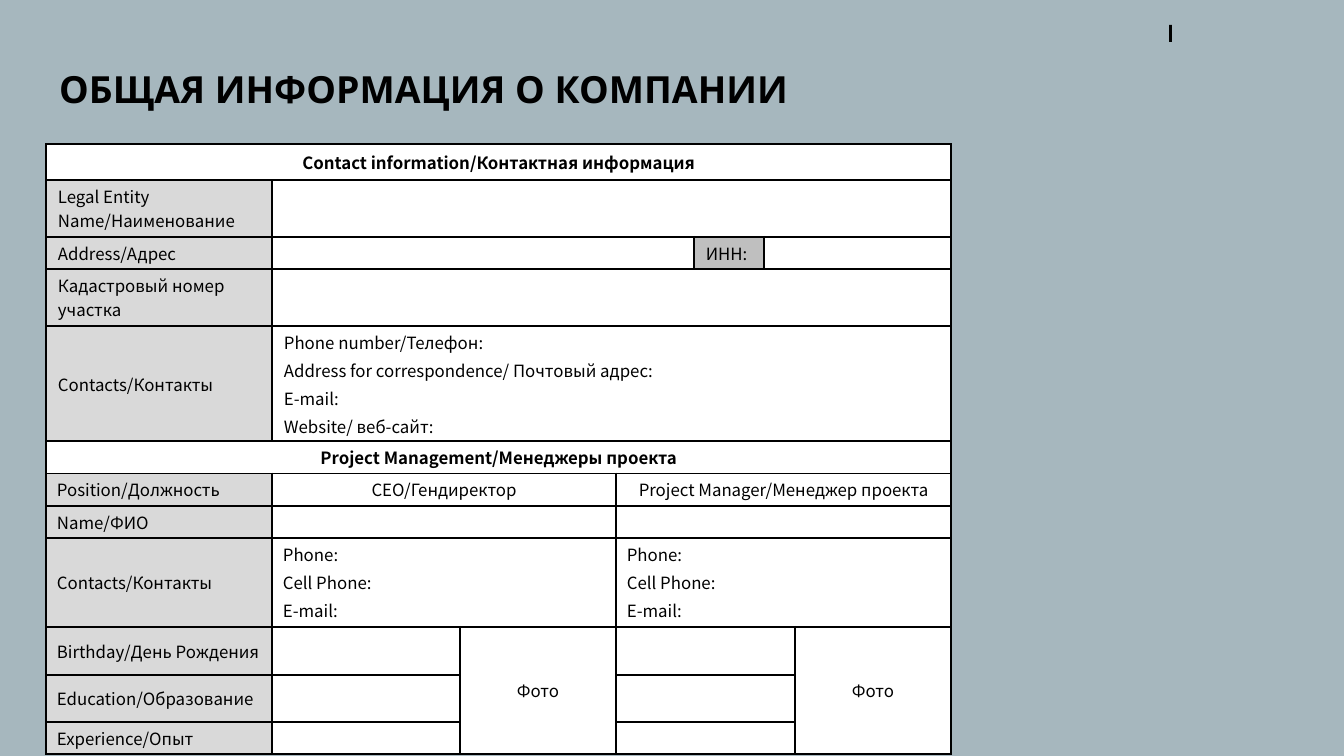
from dataclasses import dataclass

from lxml import etree
from pptx import Presentation
from pptx import util as u
from pptx.dml.color import RGBColor
from pptx.enum import shapes, text
from pptx.oxml.ns import qn


@dataclass(frozen=True)
class Theme:
    background: str = "A6B7BE"
    ink: str = "000000"
    white: str = "FFFFFF"
    label: str = "D9D9D9"
    accent: str = "BFBFBF"
    title_font: str = "Noto Sans"
    body_font: str = "Noto Sans CJK SC"
    title_pt: int = 20
    body_pt: int = 9
    gap_pt: int = 2
    border_pt: int = 1


@dataclass(frozen=True)
class Cell:
    row: int
    col: int
    words: str = ""
    fill: str = "FFFFFF"
    rows: int = 1
    cols: int = 1
    centred: bool = False
    bold: bool = False


@dataclass(frozen=True)
class Form:
    left: int
    top: int
    widths: list[int]
    heights: list[int]
    side_inset: int
    cells: list[Cell]


THEME = Theme()
EMU_PER_PX = 914400 / 134.4


def px(n: int) -> u.Emu:
    return u.Emu(round(n * EMU_PER_PX))


def rgb(colour: str) -> RGBColor:
    return RGBColor.from_string(colour)


def style_run(r, font: str, size: int, bold: bool) -> None:
    r.font.name, r.font.size, r.font.bold = font, u.Pt(size), bold
    r.font.color.rgb = rgb(THEME.ink)


def set_borders(cell) -> None:
    tc_pr = cell._tc.get_or_add_tcPr()
    for side in ("lnL", "lnR", "lnT", "lnB"):
        ln = etree.SubElement(tc_pr, qn(f"a:{side}"), w=str(u.Pt(THEME.border_pt)))
        fill = etree.SubElement(ln, qn("a:solidFill"))
        etree.SubElement(fill, qn("a:srgbClr"), val=THEME.ink)


def fill_cell(cell, item: Cell) -> None:
    cell.fill.solid()
    cell.fill.fore_color.rgb = rgb(item.fill)
    tf = cell.text_frame
    tf.text = item.words
    for i, p in enumerate(tf.paragraphs):
        p.alignment = text.PP_ALIGN.CENTER if item.centred else text.PP_ALIGN.LEFT
        if i:
            p.space_before = u.Pt(THEME.gap_pt)
        for r in p.runs:
            style_run(r, THEME.body_font, THEME.body_pt, item.bold)


def add_form(s, form: Form) -> None:
    frame = s.shapes.add_table(len(form.heights), len(form.widths), px(form.left),
                               px(form.top), px(sum(form.widths)), px(sum(form.heights)))
    table = frame.table
    table.first_row = table.horz_banding = False
    for column, width in zip(table.columns, form.widths):
        column.width = px(width)
    for row, height in zip(table.rows, form.heights):
        row.height = px(height)
    for cell in table.iter_cells():
        cell.margin_left = cell.margin_right = px(form.side_inset)
        cell.margin_top = cell.margin_bottom = px(4)
        cell.vertical_anchor = text.MSO_ANCHOR.MIDDLE
        set_borders(cell)
    for item in form.cells:
        cell = table.cell(item.row, item.col)
        if item.rows * item.cols > 1:
            cell.merge(table.cell(item.row + item.rows - 1, item.col + item.cols - 1))
        fill_cell(cell, item)
    # Empty cells keep the body size so that rows do not grow
    for cell in table.iter_cells():
        if not cell.text_frame.text:
            p = cell.text_frame.paragraphs[0]
            etree.SubElement(p._p, qn("a:endParaRPr"), sz=str(THEME.body_pt * 100))


def labels(*names: str) -> list[Cell]:
    return [Cell(i, 0, name, THEME.label) for i, name in enumerate(names, 1)]


CONTACT = Form(46, 144, [226, 422, 70, 187], [36, 54, 31, 54, 101], 12, [
    Cell(0, 0, "Contact information/Контактная информация", cols=4, centred=True, bold=True),
    *labels("Legal Entity Name/Наименование", "Address/Адрес",
            "Кадастровый номер участка", "Contacts/Контакты"),
    Cell(1, 1, cols=3),
    Cell(2, 1),
    Cell(2, 2, "ИНН:", THEME.accent),
    Cell(2, 3),
    Cell(3, 1, cols=3),
    Cell(4, 1, "Phone number/Телефон:\nAddress for correspondence/ Почтовый адрес:\n"
               "E-mail:\nWebsite/ веб-сайт:", cols=3),
])


def manager_cells(col: int, position: str) -> list[Cell]:
    return [
        Cell(1, col, position, cols=2, centred=True),
        Cell(2, col, cols=2),
        Cell(3, col, "Phone:\nCell Phone:\nE-mail:", cols=2),
        *[Cell(row, col) for row in (4, 5, 6)],
        Cell(4, col + 1, "Фото", rows=3, centred=True),
    ]


MANAGEMENT = Form(46, 441, [226, 188, 156, 179, 156], [28, 28, 28, 77, 48, 47, 28], 11, [
    Cell(0, 0, "Project Management/Менеджеры проекта", cols=5, centred=True, bold=True),
    *labels("Position/Должность", "Name/ФИО", "Contacts/Контакты",
            "Birthday/День Рождения", "Education/Образование", "Experience/Опыт"),
    *manager_cells(1, "CEO/Гендиректор"),
    *manager_cells(3, "Project Manager/Менеджер проекта"),
])


def main() -> None:
    prs = Presentation()
    prs.slide_width, prs.slide_height = px(1344), px(756)
    s = prs.slides.add_slide(prs.slide_layouts[6])
    s.background.fill.solid()
    s.background.fill.fore_color.rgb = rgb(THEME.background)

    # Small bar at the top right
    bar = s.shapes.add_shape(shapes.MSO_SHAPE.RECTANGLE, px(1169), px(25), px(3), px(17))
    bar.shadow.inherit = False
    bar.fill.solid()
    bar.fill.fore_color.rgb = rgb(THEME.ink)
    bar.line.fill.background()

    # Company forms
    for form in (CONTACT, MANAGEMENT):
        add_form(s, form)

    # Title
    tf = s.shapes.add_textbox(px(46), px(60), px(911), px(73)).text_frame
    tf.word_wrap = True
    tf.text = "ОБЩАЯ ИНФОРМАЦИЯ О КОМПАНИИ"
    style_run(tf.paragraphs[0].runs[0], THEME.title_font, THEME.title_pt, True)

    prs.save("out.pptx")


if __name__ == "__main__":
    main()
